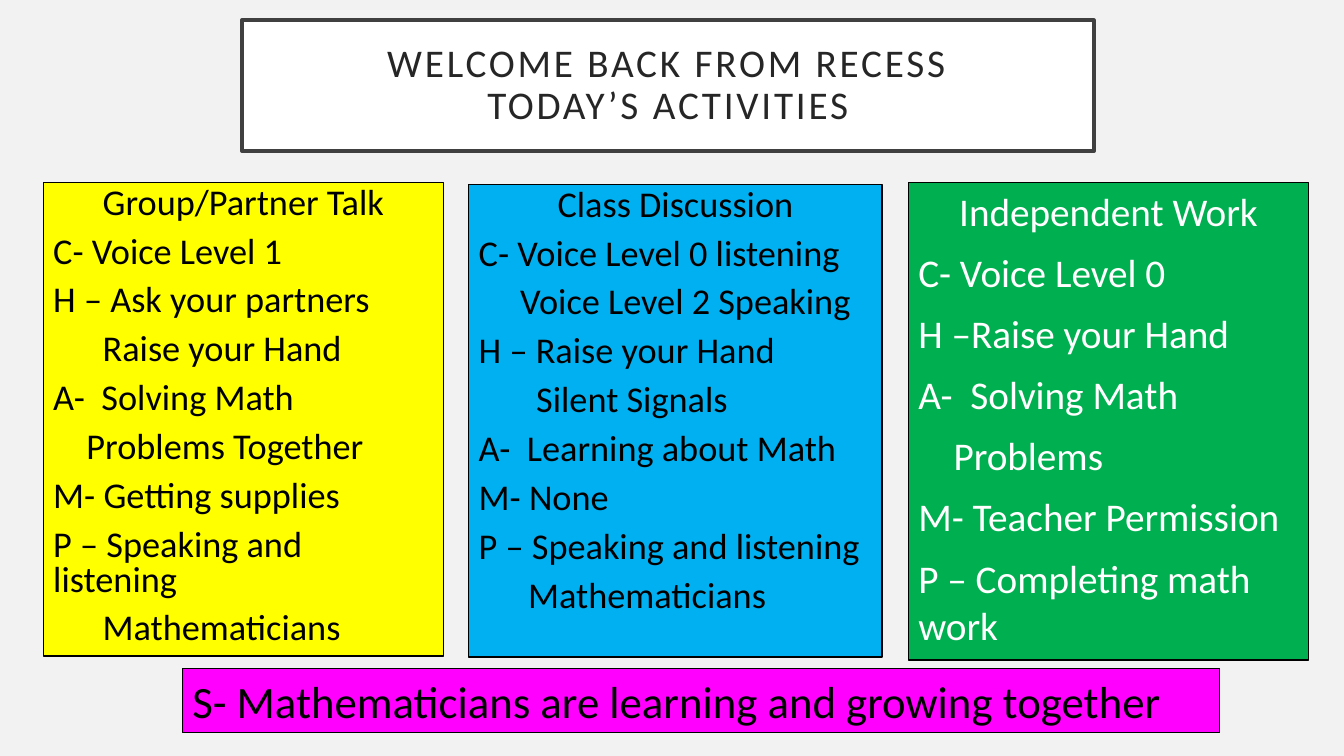
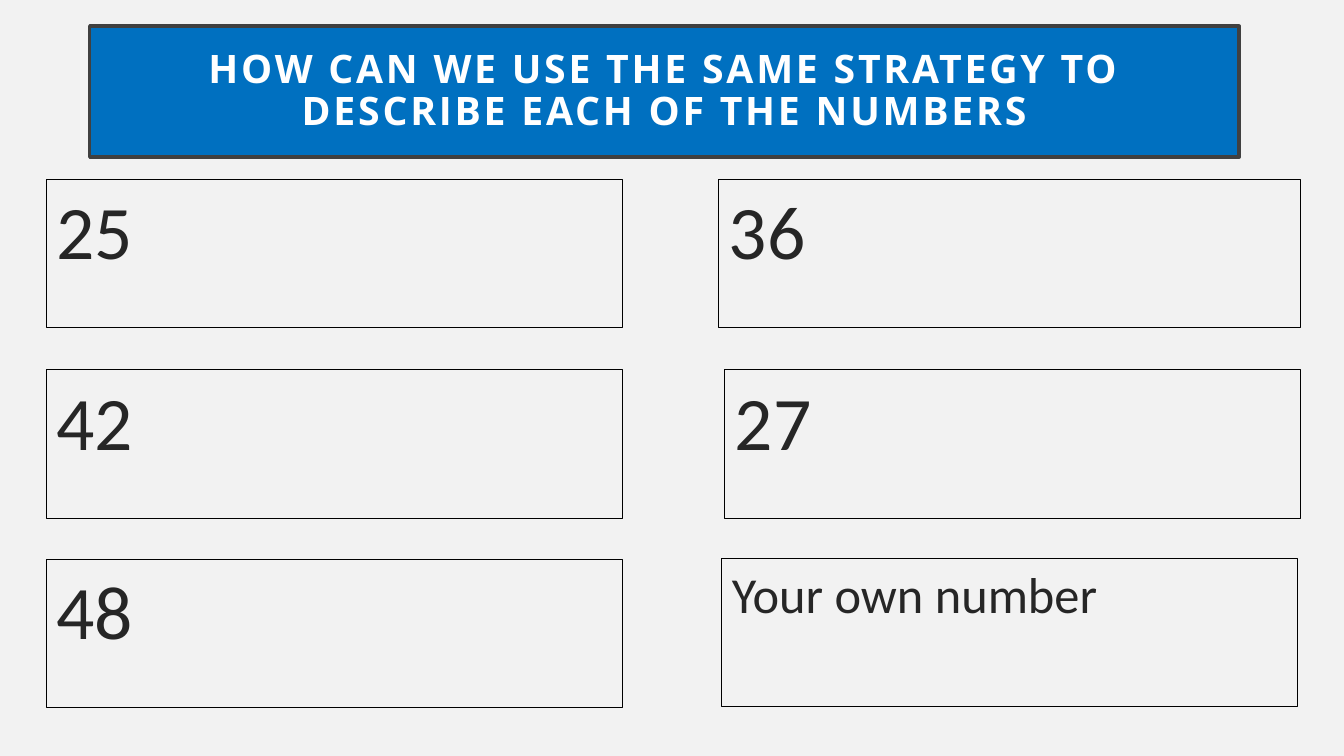
import pptx
import pptx.dml.color
import pptx.enum.shapes
import pptx.enum.text
import pptx.util

Inches = pptx.util.Inches
Pt = pptx.util.Pt
ALIGN = pptx.enum.text.PP_ALIGN
ANCHOR = pptx.enum.text.MSO_ANCHOR

COLOURS = {
    "page": "F2F2F2", "black": "000000", "white": "FFFFFF", "ink": "262626",
    "frame": "404040", "yellow": "FFFF00", "sky": "00B0F0", "green": "00B050",
    "magenta": "FF00FF", "blue": "0070C0",
}

# Shared formats
TITLE_FRAME = {"vertical_anchor": ANCHOR.MIDDLE, "margin_left": Inches(0.2),
               "margin_right": Inches(0.2), "margin_top": Inches(0.2),
               "margin_bottom": Inches(0.2)}
TITLE_PARA = {"alignment": ALIGN.CENTER, "line_spacing": 0.9}
BODY_FRAME = {"vertical_anchor": ANCHOR.TOP}
BODY_PARA = {"alignment": ALIGN.LEFT, "space_before": Pt(10)}
TIGHT_PARA = {**BODY_PARA, "line_spacing": 0.8}


def colour(name):
    return pptx.dml.color.RGBColor.from_string(COLOURS[name])


def add_box(page, place, lines, fill, ink, size, edge=("black", 0.75),
            frame_format=BODY_FRAME, para_format=BODY_PARA,
            font_name="Calibri", bold=False, tracking=0):
    """Add a framed rectangle; each line is (text, left indent in inches)."""
    box = page.shapes.add_shape(pptx.enum.shapes.MSO_SHAPE.RECTANGLE,
                                *[Inches(length) for length in place])
    box.shadow.inherit = False
    if fill:
        box.fill.solid()
        box.fill.fore_color.rgb = colour(fill)
    else:
        box.fill.background()
    box.line.color.rgb = colour(edge[0])
    box.line.width = Pt(edge[1])

    frame = box.text_frame
    frame.word_wrap = True
    for key, value in frame_format.items():
        setattr(frame, key, value)
    font_format = {"name": font_name, "size": Pt(size), "bold": bold}
    for number, (text, indent) in enumerate(lines):
        para = frame.add_paragraph() if number else frame.paragraphs[0]
        para.text = text
        for key, value in para_format.items():
            setattr(para, key, value)
        if indent:
            para._p.get_or_add_pPr().set("marL", str(Inches(indent)))
        for span in para.runs:
            for key, value in font_format.items():
                setattr(span.font, key, value)
            span.font.color.rgb = colour(ink)
            if tracking:
                span._r.get_or_add_rPr().set("spc", str(tracking * 100))
    return box


def add_page(deck, title, place, fill, ink, font_name, bold):
    """Add a blank page with the shared background and title band."""
    page = deck.slides.add_slide(deck.slide_layouts[6])
    page.background.fill.solid()
    page.background.fill.fore_color.rgb = colour("page")
    add_box(page, place, [(title, 0)], fill, ink, 28, ("frame", 2.5),
            TITLE_FRAME, TITLE_PARA, font_name, bold, tracking=2)
    return page


deck = pptx.Presentation()
deck.slide_width = Inches(13.33)
deck.slide_height = Inches(7.5)

# Slide 1: expectations for each activity
page = add_page(deck, "WELCOME BACK FROM RECESS\nTODAY’S ACTIVITIES",
                (2.4, 0.2, 8.45, 1.3), "white", "ink", "Calibri", False)

activities = [
    ((0.43, 1.81, 3.97, 4.7), "yellow", "black", 25.9, TIGHT_PARA, [
        ("Group/Partner Talk", 0),
        ("C- Voice Level 1", 0),
        ("H – Ask your partners", 0),
        ("Raise your Hand", 0.49),
        ("A-  Solving Math", 0),
        ("Problems Together", 0.33),
        ("M- Getting supplies", 0),
        ("P – Speaking and listening", 0),
        ("Mathematicians", 0.49)]),
    ((4.65, 1.83, 4.1, 4.69), "sky", "black", 25.9, TIGHT_PARA, [
        ("Class Discussion", 0),
        ("C- Voice Level 0 listening", 0),
        ("Voice Level 2 Speaking", 0.41),
        ("H – Raise your Hand", 0),
        ("Silent Signals", 0.57),
        ("A-  Learning about Math", 0),
        ("M- None", 0),
        ("P – Speaking and listening", 0),
        ("Mathematicians", 0.49)]),
    ((9.01, 1.81, 3.97, 4.74), "green", "white", 28, BODY_PARA, [
        ("Independent Work", 0),
        ("C- Voice Level 0", 0),
        ("H –Raise your Hand", 0),
        ("A-  Solving Math", 0),
        ("Problems", 0.35),
        ("M- Teacher Permission", 0),
        ("P – Completing math work", 0)]),
]
for place, fill, ink, size, para_format, lines in activities:
    box = add_box(page, place, lines, fill, ink, size, ("black", 1),
                  para_format=para_format)
    box.text_frame.paragraphs[0].alignment = ALIGN.CENTER

# Success banner
add_box(page, (1.81, 6.63, 10.29, 0.64),
        [("S- Mathematicians are learning and growing together", 0)],
        "magenta", "black", 32, para_format={"alignment": ALIGN.LEFT})

# Slide 2: numbers to describe
page = add_page(
    deck, "HOW CAN WE USE THE SAME STRATEGY TO DESCRIBE EACH OF THE NUMBERS",
    (0.89, 0.26, 11.4, 1.3), "blue", "white", "Open Sans", True)

numbers = [
    ("25", 0.46, 1.78, 5.71, 54), ("36", 7.13, 1.78, 5.77, 54),
    ("42", 0.46, 3.67, 5.71, 54), ("27", 7.19, 3.67, 5.71, 54),
    ("48", 0.46, 5.55, 5.71, 54), ("Your own number", 7.16, 5.54, 5.71, 36),
]
for text, left, top, width, size in numbers:
    add_box(page, (left, top, width, 1.47), [(text, 0)], None, "ink", size)

deck.save("out.pptx")
